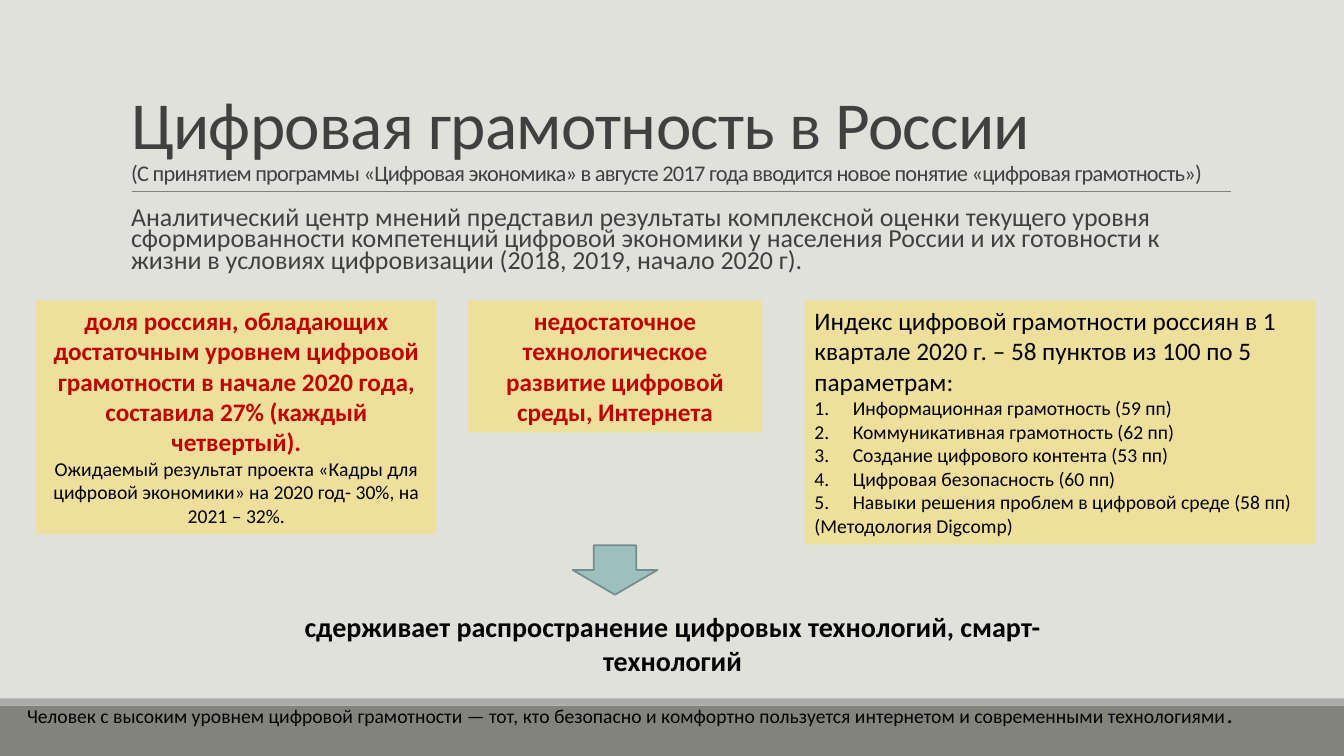
"""Build the slide on digital literacy in Russia."""
from dataclasses import dataclass

from lxml.etree import SubElement
from pptx import Presentation
from pptx.dml.color import RGBColor
from pptx.enum.shapes import MSO_CONNECTOR as Connector, MSO_SHAPE as Preset
from pptx.enum.text import MSO_ANCHOR as Anchor, MSO_AUTO_SIZE as AutoSize, PP_ALIGN as Align
from pptx.oxml.ns import qn
from pptx.util import Emu, Pt

EMU_PER_PX = 9144


@dataclass(frozen=True)
class Theme:
    font: str = "Calibri"
    backdrop: str = "E1E1DB"
    footer: str = "82847C"
    footer_edge: str = "ACADA8"
    rule: str = "808080"
    heading: str = "404040"
    card: str = "EEE09C"
    accent: str = "C00000"
    ink: str = "000000"
    arrow: str = "9DBFBE"
    arrow_edge: str = "748D8D"
    title_size: float = 48
    subtitle_size: float = 16
    intro_size: float = 18.5
    lead_size: float = 18
    detail_size: float = 14
    conclusion_size: float = 20


THEME = Theme()


@dataclass(frozen=True)
class Box:
    left: int
    top: int
    width: int
    height: int

    def emu(self) -> tuple:
        return tuple(px(n) for n in (self.left, self.top, self.width, self.height))


@dataclass(frozen=True)
class Line:
    text: str
    size: float
    color: str = THEME.ink
    bold: bool = False
    numbered: bool = False


@dataclass(frozen=True)
class Panel:
    box: Box
    lines: tuple
    align: Align = Align.CENTER
    fill: str = ""


@dataclass(frozen=True)
class Figure:
    box: Box
    preset: Preset
    fill: str
    edge: str = ""


FIGURES = (
    Figure(Box(0, 700, 1333, 50), Preset.RECTANGLE, THEME.footer),
    Figure(Box(0, 693, 1333, 7), Preset.RECTANGLE, THEME.footer_edge),
    Figure(Box(568, 541, 84, 49), Preset.DOWN_ARROW, THEME.arrow, THEME.arrow_edge),
)

SKILLS = (
    "Информационная грамотность (59 пп)",
    "Коммуникативная грамотность (62 пп)",
    "Создание цифрового контента (53 пп)",
    "Цифровая безопасность (60 пп)",
    "Навыки решения проблем в цифровой среде (58 пп)",
)

PANELS = (
    Panel(Box(36, 298, 397, 232), (
        Line("доля россиян, обладающих достаточным уровнем цифровой грамотности "
             "в начале 2020 года, составила 27% (каждый четвертый).",
             THEME.lead_size, THEME.accent, bold=True),
        Line("Ожидаемый результат проекта «Кадры для цифровой экономики» "
             "на 2020 год- 30%, на 2021 – 32%.", THEME.detail_size),
    ), fill=THEME.card),
    Panel(Box(464, 298, 292, 131), (
        Line("недостаточное технологическое развитие цифровой среды, Интернета",
             THEME.lead_size, THEME.accent, bold=True),
    ), fill=THEME.card),
    Panel(Box(798, 298, 507, 242), (
        Line("Индекс цифровой грамотности россиян в 1 квартале 2020 г. – "
             "58 пунктов из 100 по 5 параметрам:", THEME.lead_size),
        *(Line(skill, THEME.detail_size, numbered=True) for skill in SKILLS),
        Line("(Методология Digсomp)", THEME.detail_size),
    ), Align.LEFT, THEME.card),
    Panel(Box(263, 600, 808, 77), (
        Line("сдерживает распространение цифровых технологий, смарт-технологий",
             THEME.conclusion_size, bold=True),
    )),
)


def px(count: int) -> Emu:
    return Emu(count * EMU_PER_PX)


def rgb(color: str) -> RGBColor:
    return RGBColor.from_string(color)


def add_text(paragraph, text: str, *, size: float, color: str = THEME.ink,
             bold: bool = False, tracking: int = 0) -> None:
    run = paragraph.add_run()
    run.text = text
    font = run.font
    font.name, font.size, font.bold = THEME.font, Pt(size), bold
    font.color.rgb = rgb(color)
    if tracking:
        run._r.get_or_add_rPr().set("spc", str(tracking))


def add_bullet(paragraph, indent: int, kind: str, **attributes: str) -> None:
    properties = paragraph._p.get_or_add_pPr()
    properties.set("marL", str(px(indent)))
    properties.set("indent", str(px(-indent)))
    SubElement(properties, qn(kind), attributes)


def add_figure(slide, figure: Figure) -> None:
    shape = slide.shapes.add_shape(figure.preset, *figure.box.emu())
    shape.shadow.inherit = False
    shape.fill.solid()
    shape.fill.fore_color.rgb = rgb(figure.fill)
    if figure.edge:
        shape.line.color.rgb = rgb(figure.edge)
        shape.line.width = Pt(1.25)
    else:
        shape.line.fill.background()


def add_frame(slide, box: Box, fill: str = ""):
    textbox = slide.shapes.add_textbox(*box.emu())
    if fill:
        textbox.fill.solid()
        textbox.fill.fore_color.rgb = rgb(fill)
    frame = textbox.text_frame
    frame.word_wrap = True
    frame.auto_size = AutoSize.SHAPE_TO_FIT_TEXT
    return frame


def add_panel(slide, panel: Panel) -> None:
    frame = add_frame(slide, panel.box, panel.fill)
    for index, line in enumerate(panel.lines):
        paragraph = frame.add_paragraph() if index else frame.paragraphs[0]
        paragraph.alignment = panel.align
        if line.numbered:
            add_bullet(paragraph, 38, "a:buAutoNum", type="arabicPeriod")
        add_text(paragraph, line.text, size=line.size, color=line.color, bold=line.bold)


def place(placeholder, box: Box, anchor: Anchor, spacing: float):
    placeholder.left, placeholder.top, placeholder.width, placeholder.height = box.emu()
    frame = placeholder.text_frame
    frame.word_wrap = True
    frame.auto_size = AutoSize.NONE
    frame.vertical_anchor = anchor
    paragraph = frame.paragraphs[0]
    paragraph.alignment = Align.LEFT
    paragraph.line_spacing = spacing
    return paragraph


def add_heading(slide) -> None:
    heading = place(slide.shapes.title, Box(120, 31, 1100, 159), Anchor.BOTTOM, 0.85)
    add_text(heading, "Цифровая грамотность в России",
             size=THEME.title_size, color=THEME.heading, tracking=-50)
    heading.add_line_break()
    add_text(heading, "(С принятием программы «Цифровая экономика» в августе 2017 года "
             "вводится новое понятие «цифровая грамотность»)",
             size=THEME.subtitle_size, color=THEME.heading, tracking=-50)
    rule = slide.shapes.add_connector(
        Connector.STRAIGHT, px(131), px(190), px(1221), px(190))
    rule.line.color.rgb = rgb(THEME.rule)
    rule.line.width = Pt(0.5)
    SubElement(rule._element.spPr, qn("a:effectLst"))


def add_intro(slide) -> None:
    body = slide.placeholders[1]
    intro = place(body, Box(120, 202, 1100, 80), Anchor.TOP, 0.7)
    body.text_frame.margin_left = body.text_frame.margin_right = 0
    intro.space_before, intro.space_after = Pt(12), Pt(2)
    add_bullet(intro, 10, "a:buChar", char=" ")
    add_text(intro, "Аналитический центр мнений представил результаты комплексной оценки "
             "текущего уровня сформированности компетенций цифровой экономики у населения "
             "России и их готовности к жизни в условиях цифровизации "
             "(2018, 2019, начало 2020 г).", size=THEME.intro_size, color=THEME.heading)


def add_definition(slide) -> None:
    definition = add_frame(slide, Box(17, 688, 1269, 64)).paragraphs[0]
    add_text(definition, "Человек с высоким уровнем цифровой грамотности — тот, кто "
             "безопасно и комфортно пользуется интернетом и современными технологиями",
             size=THEME.detail_size)
    add_text(definition, ".", size=THEME.lead_size)


def main() -> None:
    deck = Presentation()
    deck.slide_width, deck.slide_height = px(1333), px(750)
    slide = deck.slides.add_slide(deck.slide_layouts[1])
    slide.background.fill.solid()
    slide.background.fill.fore_color.rgb = rgb(THEME.backdrop)
    add_heading(slide)
    add_intro(slide)
    for figure in FIGURES:
        add_figure(slide, figure)
    for panel in PANELS:
        add_panel(slide, panel)
    add_definition(slide)
    deck.save("out.pptx")


if __name__ == "__main__":
    main()
